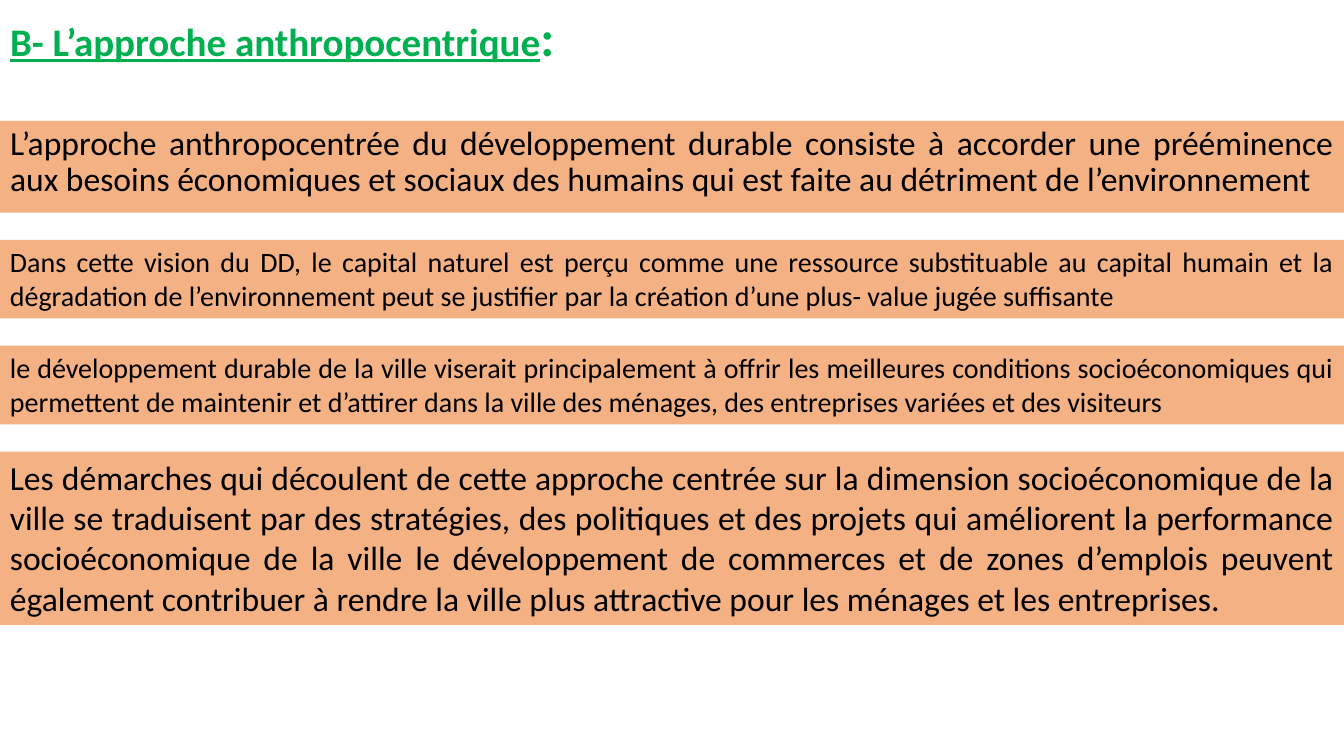
from pptx import Presentation
from pptx import util as u
from pptx.dml.color import RGBColor
from pptx.enum import text

TITLE = [("B- L’approche anthropocentrique", "title", True), (":", "colon", False)]
LEAD = ("L’approche anthropocentrée du développement durable consiste à accorder une prééminence "
        "aux besoins économiques et sociaux des humains qui est faite au détriment de l’environnement")
BANDS = [
    ("Dans cette vision du DD, le capital naturel est perçu comme une ressource substituable au "
     "capital humain et la dégradation de l’environnement peut se justifier par la création d’une "
     "plus- value jugée suffisante", "small", 0.78),
    ("le développement durable de la ville viserait principalement à offrir les meilleures "
     "conditions socioéconomiques qui permettent de maintenir et d’attirer dans la ville des "
     "ménages, des entreprises variées et des visiteurs", "small", 0.78),
    ("Les démarches qui découlent de cette approche centrée sur la dimension socioéconomique de la "
     "ville se traduisent par des stratégies, des politiques et des projets qui améliorent la "
     "performance socioéconomique de la ville le développement de commerces et de zones d’emplois "
     "peuvent également contribuer à rendre la ville plus attractive pour les ménages et les "
     "entreprises.", "large", 1.72),
]
THEME = {
    "font": "Calibri",
    "colors": {"title": "00B050", "text": "000000", "band": "F4B183"},
    "sizes": {"title": 27.9, "colon": 36, "large": 24, "small": 20},
}
WIDTH, HEIGHT = 13.33, 7.5
LEAD_TOP, LEAD_HEIGHT, GAP = 1.2, 0.91, 0.27


def set_attrs(obj, **values):
    for name, value in values.items():
        setattr(obj, name, value)


def place(sp, top, width, height):
    set_attrs(sp, left=0, top=u.Inches(top), width=u.Inches(width), height=u.Inches(height))


def add_run(p, words, size, color="text", **font):
    r = p.add_run()
    r.text = words
    set_attrs(r.font, name=THEME["font"], size=u.Pt(THEME["sizes"][size]), **font)
    r.font.color.rgb = RGBColor.from_string(THEME["colors"][color])


def prepare(sp, anchor, auto_size, **paragraph):
    tf = sp.text_frame
    set_attrs(tf, word_wrap=True, vertical_anchor=anchor, auto_size=auto_size)
    p = tf.paragraphs[0]
    set_attrs(p, alignment=text.PP_ALIGN.JUSTIFY, **paragraph)
    return p


def fill_band(sp):
    sp.fill.solid()
    sp.fill.fore_color.rgb = RGBColor.from_string(THEME["colors"]["band"])


def main():
    prs = Presentation()
    set_attrs(prs, slide_width=u.Inches(WIDTH), slide_height=u.Inches(HEIGHT))
    s = prs.slides.add_slide(prs.slide_layouts[0])
    anchor, fit = text.MSO_ANCHOR, text.MSO_AUTO_SIZE

    title = s.shapes.title
    place(title, 0.46, 10, 0.31)
    p = prepare(title, anchor.BOTTOM, fit.NONE, line_spacing=0.9)
    title.text_frame.margin_bottom = u.Inches(0.1)
    for words, size, underline in TITLE:
        add_run(p, words, size, "title", bold=True, underline=underline)

    lead = s.placeholders[1]
    place(lead, LEAD_TOP, WIDTH, LEAD_HEIGHT)
    fill_band(lead)
    p = prepare(lead, anchor.TOP, fit.NONE, line_spacing=0.9, space_before=u.Pt(10))
    add_run(p, LEAD, "large")

    top = LEAD_TOP + LEAD_HEIGHT + GAP
    for words, size, height in BANDS:
        sp = s.shapes.add_textbox(0, 0, 0, 0)
        place(sp, top, WIDTH, height)
        fill_band(sp)
        add_run(prepare(sp, anchor.TOP, fit.SHAPE_TO_FIT_TEXT), words, size)
        top += height + GAP

    prs.save("out.pptx")


if __name__ == "__main__":
    main()
